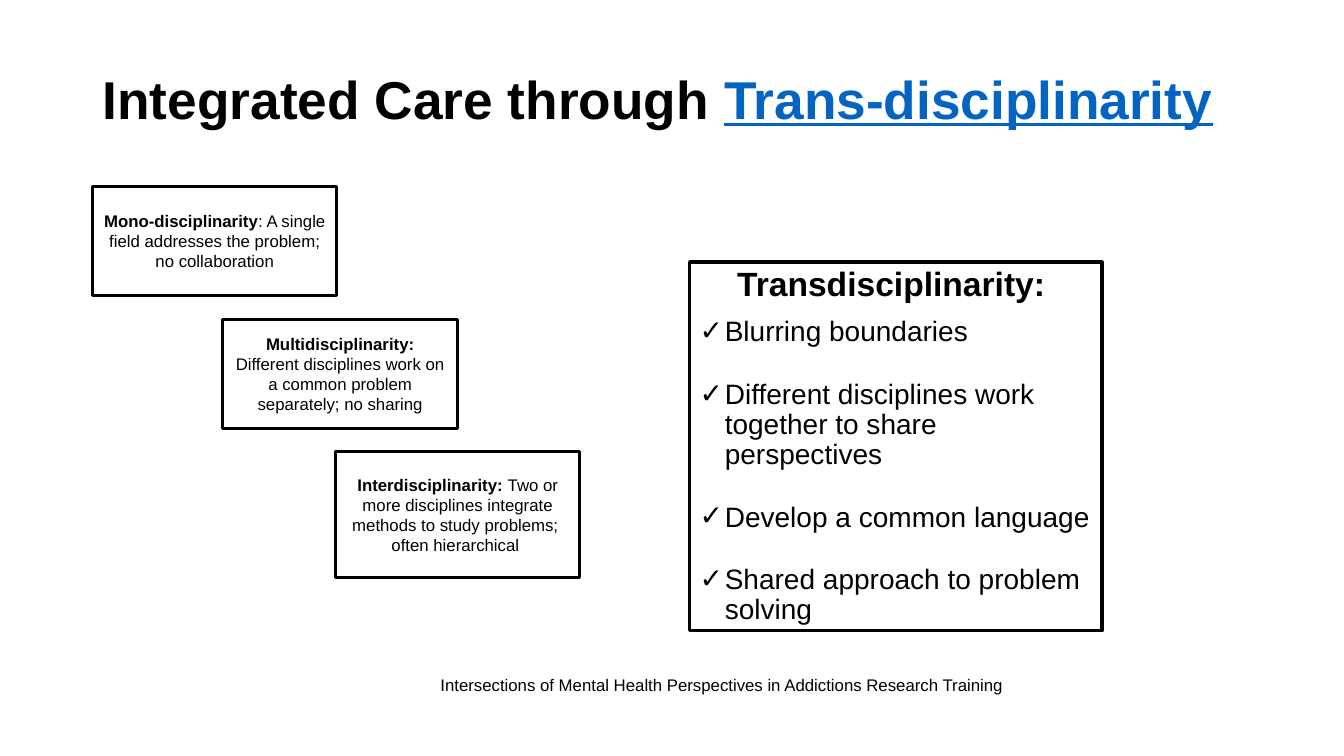
from dataclasses import dataclass

from lxml import etree
from pptx import Presentation, util as u
from pptx.dml.color import RGBColor
from pptx.enum import shapes, text
from pptx.oxml.ns import qn


@dataclass(frozen=True)
class Theme:
    font: str = "Arial"
    ink: str = "000000"
    paper: str = "FFFFFF"
    accent: str = "0563C1"
    title: int = 38
    heading: int = 24
    bullet: int = 20
    small: int = 12
    border: float = 2.25


THEME = Theme()

STEPS = [
    ((0.92, 1.85, 2.42, 1.08), "Mono-disciplinarity",
     [": A single field addresses the problem; no collaboration"]),
    ((2.21, 3.17, 2.33, 1.08), "Multidisciplinarity: ",
     ["Different disciplines work on a common problem separately; no sharing"]),
    ((3.33, 4.48, 2.42, 1.25), "Interdisciplinarity: ",
     ["Two or more disciplines integrate methods to study problems; ",
      "often hierarchical "]),
]
FEATURES = [
    "Blurring boundaries",
    "Different disciplines work together to share perspectives",
    "Develop a common language",
    "Shared approach to problem solving",
]


def add_run(paragraph, wording, size, color=THEME.ink, **formats):
    run = paragraph.add_run()
    run.text = wording
    formats = {"name": THEME.font, "size": u.Pt(size), **formats}
    for name, value in formats.items():
        setattr(run.font, name, value)
    run.font.color.rgb = RGBColor.from_string(color)


def format_paragraph(paragraph, **formats):
    for name, value in formats.items():
        setattr(paragraph, name, value)


def add_text_box(slide, box, anchor):
    frame = slide.shapes.add_textbox(*map(u.Inches, box)).text_frame
    frame.word_wrap = True
    frame.vertical_anchor = anchor
    return frame


def add_framed_box(slide, box):
    shape = slide.shapes.add_shape(
        shapes.MSO_SHAPE.RECTANGLE, *map(u.Inches, box))
    shape.shadow.inherit = False
    shape.fill.solid()
    shape.fill.fore_color.rgb = RGBColor.from_string(THEME.paper)
    shape.line.color.rgb = RGBColor.from_string(THEME.ink)
    shape.line.width = u.Pt(THEME.border)
    frame = shape.text_frame
    frame.word_wrap = True
    frame.vertical_anchor = text.MSO_ANCHOR.MIDDLE
    return frame


def add_check_mark(paragraph):
    properties = paragraph._p.get_or_add_pPr()
    properties.set("marL", str(u.Inches(0.25)))
    properties.set("indent", str(u.Inches(-0.25)))
    etree.SubElement(properties, qn("a:buFont"), typeface=THEME.font)
    etree.SubElement(properties, qn("a:buChar"), char="✓")


def add_title(slide, box):
    paragraph = add_text_box(slide, box, text.MSO_ANCHOR.MIDDLE).paragraphs[0]
    paragraph.line_spacing = 0.9
    add_run(paragraph, "Integrated Care through ", THEME.title, bold=True)
    add_run(paragraph, "Trans-disciplinarity", THEME.title, THEME.accent,
            bold=True, underline=True)


def add_step(slide, box, term, lines):
    frame = add_framed_box(slide, box)
    paragraph = frame.paragraphs[0]
    add_run(paragraph, term, THEME.small, bold=True)
    add_run(paragraph, lines[0], THEME.small)
    for line in lines[1:]:
        add_run(frame.add_paragraph(), line, THEME.small)
    for paragraph in frame.paragraphs:
        paragraph.alignment = text.PP_ALIGN.CENTER


def add_feature_panel(slide, box):
    frame = add_framed_box(slide, box)
    heading = frame.paragraphs[0]
    format_paragraph(heading, alignment=text.PP_ALIGN.CENTER, line_spacing=0.9)
    add_run(heading, "Transdisciplinarity: ", THEME.heading, bold=True)
    for index, feature in enumerate(FEATURES):
        paragraph = frame.add_paragraph()
        add_check_mark(paragraph)
        format_paragraph(paragraph, alignment=text.PP_ALIGN.LEFT,
                         line_spacing=0.9,
                         space_before=u.Pt(23 if index else 10))
        add_run(paragraph, feature, THEME.bullet)


def add_footer(slide, box):
    frame = add_text_box(slide, box, text.MSO_ANCHOR.TOP)
    add_run(frame.paragraphs[0],
            "Intersections of Mental Health Perspectives in Addictions "
            "Research Training", THEME.small)


def main():
    presentation = Presentation()
    presentation.slide_width = u.Inches(13.33)
    presentation.slide_height = u.Inches(7.5)
    slide = presentation.slides.add_slide(presentation.slide_layouts[6])
    add_title(slide, (0.92, 0.4, 11.5, 1.22))
    for box, term, lines in STEPS:
        add_step(slide, box, term, lines)
    add_feature_panel(slide, (6.84, 2.6, 4.09, 3.66))
    add_footer(slide, (4.27, 6.64, 6.04, 0.3))
    presentation.save("out.pptx")


if __name__ == "__main__":
    main()
